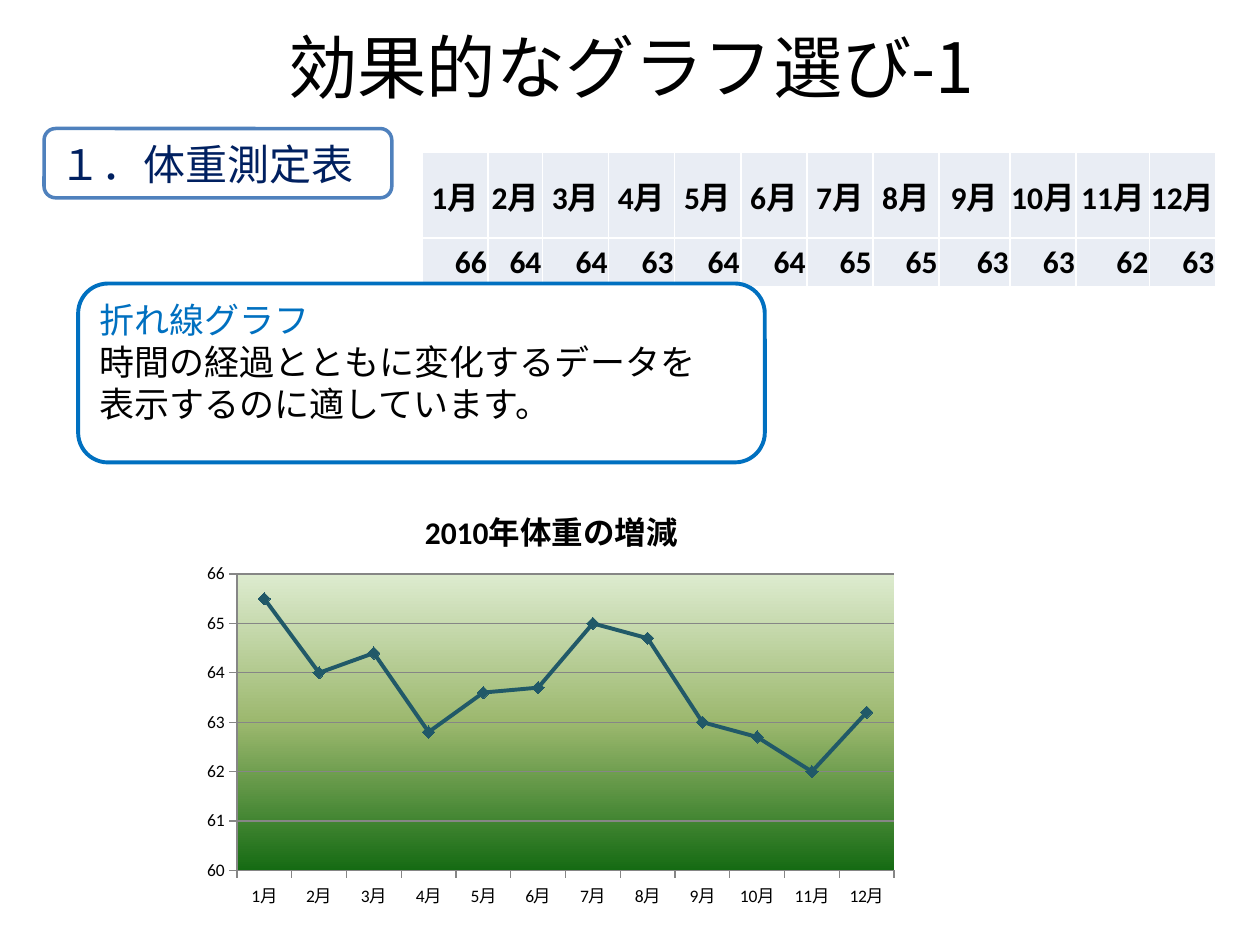
from lxml.etree import SubElement
from pptx import Presentation
from pptx.chart.data import CategoryChartData
from pptx.dml.color import RGBColor
from pptx.enum.chart import XL_CHART_TYPE, XL_MARKER_STYLE, XL_TICK_MARK
from pptx.enum.shapes import MSO_SHAPE
from pptx.enum.text import MSO_ANCHOR, PP_ALIGN
from pptx.oxml import parse_xml
from pptx.oxml.ns import nsdecls, qn
from pptx.util import Inches, Pt

BLACK = RGBColor(0x00, 0x00, 0x00)
WHITE = RGBColor(0xFF, 0xFF, 0xFF)
NAVY = RGBColor(0x00, 0x20, 0x60)
BLUE = RGBColor(0x00, 0x70, 0xC0)
STEEL = RGBColor(0x4F, 0x81, 0xBD)
PALE = RGBColor(0xE9, 0xED, 0xF4)
TEAL = RGBColor(0x21, 0x59, 0x68)
GRAY = RGBColor(0x86, 0x86, 0x86)
GRADIENT = [(0, RGBColor(0xDD, 0xEB, 0xCF)), (50, RGBColor(0x9C, 0xB8, 0x6E)),
            (100, RGBColor(0x15, 0x6B, 0x13))]
JAPANESE, LATIN = "Noto Sans CJK JP", "Calibri"

TITLE = "効果的なグラフ選び-1"
HEADING = [("１．体重測定表", NAVY)]
ADVICE = [
    ("折れ線グラフ", BLUE),
    ("時間の経過とともに変化するデータを", BLACK),
    ("表示するのに適しています。", BLACK),
]
CHART_TITLE = "2010年体重の増減"
MONTHS = [f"{number}月" for number in range(1, 13)]
TABLE_WEIGHTS = [66, 64, 64, 63, 64, 64, 65, 65, 63, 63, 62, 63]
CHART_WEIGHTS = [65.5, 64, 64.4, 62.8, 63.6, 63.7, 65, 64.7, 63, 62.7, 62, 63.2]
COLUMN_SHARES = [0.52, 0.43] + [0.52] * 6 + [0.56, 0.52, 0.58, 0.52]
PLOT_LAYOUT = {"x": 0.06, "y": 0.21, "w": 0.92, "h": 0.68}


def box(*lengths):
    return [Inches(length) for length in lengths]


def add_run(paragraph, text, size, color, font, bold=False):
    run = paragraph.add_run()
    run.text = text
    run.font.size = Pt(size)
    run.font.bold = bold
    run.font.color.rgb = color
    run.font.name = font
    SubElement(run.font._element, qn("a:ea")).set("typeface", JAPANESE)


def add_panel(slide, place, border, width, lines, size):
    shape = slide.shapes.add_shape(MSO_SHAPE.ROUNDED_RECTANGLE, *box(*place))
    shape.shadow.inherit = False
    shape.fill.solid()
    shape.fill.fore_color.rgb = WHITE
    shape.line.color.rgb = border
    shape.line.width = Pt(width)
    frame = shape.text_frame
    frame.word_wrap = True
    frame.vertical_anchor = MSO_ANCHOR.TOP
    for index, (text, color) in enumerate(lines):
        paragraph = frame.add_paragraph() if index else frame.paragraphs[0]
        paragraph.alignment = PP_ALIGN.LEFT
        add_run(paragraph, text, size, color, JAPANESE)


def format_cell(cell, text, alignment):
    cell.margin_left = cell.margin_right = cell.margin_top = Inches(0.01)
    cell.margin_bottom = 0
    cell.vertical_anchor = MSO_ANCHOR.MIDDLE
    paragraph = cell.text_frame.paragraphs[0]
    paragraph.alignment = alignment
    add_run(paragraph, text, 18, BLACK, LATIN, True)
    properties = cell._tc.get_or_add_tcPr()
    for side in ("lnL", "lnR", "lnT", "lnB"):
        properties.append(parse_xml(
            f'<a:{side} {nsdecls("a")} w="12700"><a:solidFill>'
            f'<a:srgbClr val="{WHITE}"/></a:solidFill></a:{side}>'))
    cell.fill.solid()
    cell.fill.fore_color.rgb = PALE


def add_weight_table(slide):
    rows = [(MONTHS, PP_ALIGN.CENTER), (TABLE_WEIGHTS, PP_ALIGN.RIGHT)]
    width = 6.3
    table = slide.shapes.add_table(
        len(rows), len(MONTHS), *box(3.35, 1.21, width, 0.78)).table
    table.first_row = table.horz_banding = False
    for column, share in zip(table.columns, COLUMN_SHARES):
        column.width = Inches(width * share / sum(COLUMN_SHARES))
    for row_index, (values, alignment) in enumerate(rows):
        for column_index, value in enumerate(values):
            format_cell(table.cell(row_index, column_index), str(value), alignment)


def format_plot_area(chart):
    plot_area = chart._chartSpace.chart.plotArea
    for layout in plot_area.findall(qn("c:layout")):
        plot_area.remove(layout)
    places = "".join(f'<c:{name} val="{share}"/>' for name, share in PLOT_LAYOUT.items())
    plot_area.insert(0, parse_xml(
        f'<c:layout {nsdecls("c")}><c:manualLayout><c:layoutTarget val="inner"/>'
        f'<c:xMode val="edge"/><c:yMode val="edge"/>{places}</c:manualLayout></c:layout>'))
    stops = "".join(f'<a:gs pos="{share * 1000}"><a:srgbClr val="{color}"/></a:gs>'
                    for share, color in GRADIENT)
    plot_area.append(parse_xml(
        f'<c:spPr {nsdecls("c", "a")}><a:gradFill><a:gsLst>{stops}</a:gsLst>'
        f'<a:lin ang="5400000" scaled="0"/></a:gradFill></c:spPr>'))


def add_weight_chart(slide):
    data = CategoryChartData()
    data.categories = MONTHS
    data.add_series("Series 1", CHART_WEIGHTS)
    chart = slide.shapes.add_chart(
        XL_CHART_TYPE.LINE_MARKERS, *box(1.54, 3.83, 5.67, 3.46), data).chart
    chart.has_legend = False
    chart.font.name = LATIN
    chart.font.size = Pt(10)
    chart.font.color.rgb = BLACK
    chart.has_title = True
    add_run(chart.chart_title.text_frame.paragraphs[0], CHART_TITLE, 18, BLACK, LATIN, True)
    chart.chart_title.include_in_layout = False
    for axis in (chart.category_axis, chart.value_axis):
        axis.major_tick_mark = XL_TICK_MARK.OUTSIDE
        axis.minor_tick_mark = XL_TICK_MARK.NONE
        axis.format.line.color.rgb = GRAY
    value_axis = chart.value_axis
    value_axis.minimum_scale, value_axis.maximum_scale = 60, 66
    value_axis.major_unit = 1
    value_axis.tick_labels.number_format = "0"
    value_axis.tick_labels.number_format_is_linked = False
    value_axis.major_gridlines.format.line.color.rgb = GRAY
    plot = chart.plots[0]
    plot.vary_by_categories = False
    series = plot.series[0]
    series.smooth = False
    series.format.line.color.rgb = TEAL
    series.format.line.width = Pt(2.25)
    series.marker.style = XL_MARKER_STYLE.DIAMOND
    series.marker.size = 7
    series.marker.format.fill.solid()
    series.marker.format.fill.fore_color.rgb = TEAL
    series.marker.format.line.color.rgb = TEAL
    format_plot_area(chart)


def main():
    presentation = Presentation()
    presentation.slide_width, presentation.slide_height = box(10, 7.5)
    slide = presentation.slides.add_slide(presentation.slide_layouts[5])
    title = slide.shapes.title
    title.left, title.top, title.width, title.height = box(0.51, 0.13, 9, 0.79)
    title.text_frame.vertical_anchor = MSO_ANCHOR.MIDDLE
    paragraph = title.text_frame.paragraphs[0]
    paragraph.alignment = PP_ALIGN.CENTER
    add_run(paragraph, TITLE, 39.6, BLACK, JAPANESE)
    add_panel(slide, (0.35, 1.02, 2.76, 0.55), STEEL, 2, HEADING, 24)
    add_weight_table(slide)
    add_panel(slide, (0.62, 2.25, 5.45, 1.42), BLUE, 2.25, ADVICE, 20)
    add_weight_chart(slide)
    presentation.save("out.pptx")


if __name__ == "__main__":
    main()
